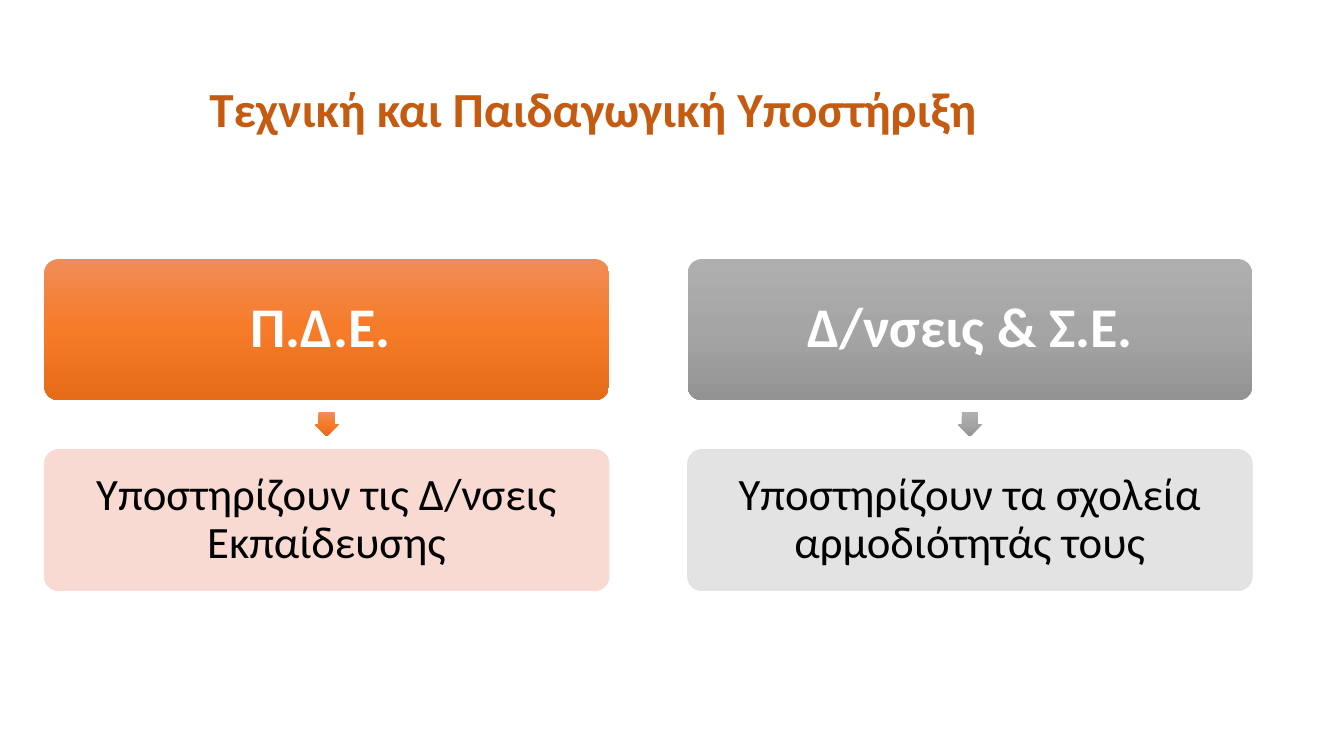
from copy import deepcopy

from lxml import etree
from pptx import Presentation
from pptx import util as u
from pptx.dml.color import RGBColor
from pptx.enum import shapes, text
from pptx.oxml.ns import qn

PX = 9144  # EMU in one px, at 100 px to the inch
FONT = "Calibri"
COLORS = {
    "title": "C55A11",
    "white": "FFFFFF",
    "black": "000000",
    "orange": ("F18C57", "F67B28", "E56C19"),
    "orange tint": "F8D7CE",
    "gray": ("AFAFAF", "A5A5A5", "939393"),
    "gray tint": "E1E1E1",
}
COLUMNS = [
    ("Π.Δ.Ε. ", "Υποστηρίζουν τις Δ/νσεις Εκπαίδευσης", "orange"),
    ("Δ/νσεις & Σ.Ε.", "Υποστηρίζουν τα σχολεία αρμοδιότητάς τους", "gray"),
]
COLUMN_LEFT, COLUMN_STEP = 44, 638
BOX_WIDTH, BOX_HEIGHT, ARROW_SIZE = 560, 140, 24
HEADER_TOP, ARROW_TOP, DETAIL_TOP = 257, 409, 446


def px(*lengths):
    return [u.Emu(length * PX) for length in lengths]


def write(shape, wording, size, color, bold=False):
    paragraph = shape.text_frame.paragraphs[0]
    paragraph.text = wording
    paragraph.alignment = text.PP_ALIGN.CENTER
    font = paragraph.runs[0].font
    font.name, font.size, font.bold = FONT, u.Pt(size), bold
    font.color.rgb = RGBColor.from_string(COLORS[color])
    return paragraph


def fill_gradient(shape, colors):
    """Fill from top to bottom with three evenly spaced colours."""
    shape.fill.gradient()
    shape.fill.gradient_angle = 270
    stop_list = shape._element.spPr.find(".//" + qn("a:gsLst"))
    stop_list.insert(1, deepcopy(stop_list[0]))
    for index, stop in enumerate(shape.fill.gradient_stops):
        stop.position = index / 2
        stop.color.rgb = RGBColor.from_string(colors[index])


def fill_tint(shape, color):
    """Give fill and thin outline one colour at 90% opacity."""
    shape.fill.solid()
    shape.line.width = u.Pt(0.5)
    for target in (shape.fill.fore_color, shape.line.color):
        target.rgb = RGBColor.from_string(color)
    for color_element in shape._element.spPr.iter(qn("a:srgbClr")):
        etree.SubElement(color_element, qn("a:alpha"), val="90000")


def add_plain_shape(slide, kind, adjustments, *bounds):
    shape = slide.shapes.add_shape(kind, *px(*bounds))
    shape.shadow.inherit = False
    shape.line.fill.background()
    for index, value in enumerate(adjustments):
        shape.adjustments[index] = value
    return shape


def add_box(slide, left, top, wording, size, color, inset, bold=False):
    box = add_plain_shape(slide, shapes.MSO_SHAPE.ROUNDED_RECTANGLE, [0.1],
                          left, top, BOX_WIDTH, BOX_HEIGHT)
    frame = box.text_frame
    frame.word_wrap = True
    frame.vertical_anchor = text.MSO_ANCHOR.MIDDLE
    frame.margin_left, frame.margin_top, frame.margin_right, frame.margin_bottom = px(*[inset] * 4)
    write(box, wording, size, color, bold).line_spacing = 0.9
    return box


def add_column(slide, left, header, detail, hue):
    header_box = add_box(slide, left, HEADER_TOP, header, 40, "white", 6, bold=True)
    fill_gradient(header_box, COLORS[hue])

    arrow_left = left + (BOX_WIDTH - ARROW_SIZE) // 2
    arrow = add_plain_shape(slide, shapes.MSO_SHAPE.DOWN_ARROW, [0.667, 0.5],
                            arrow_left, ARROW_TOP, ARROW_SIZE, ARROW_SIZE)
    fill_gradient(arrow, COLORS[hue])

    detail_box = add_box(slide, left, DETAIL_TOP, detail, 32, "black", 4)
    fill_tint(detail_box, COLORS[hue + " tint"])


def add_title(slide, wording):
    title = slide.shapes.add_textbox(*px(116, 73, 956, 69))
    title.text_frame.word_wrap = True
    title.text_frame.auto_size = text.MSO_AUTO_SIZE.SHAPE_TO_FIT_TEXT
    write(title, wording, 35, "title", bold=True)


def main():
    presentation = Presentation()
    presentation.slide_width, presentation.slide_height = px(1333, 750)
    slide = presentation.slides.add_slide(presentation.slide_layouts[6])
    for index, column in enumerate(COLUMNS):
        add_column(slide, COLUMN_LEFT + index * COLUMN_STEP, *column)
    add_title(slide, "Τεχνική και Παιδαγωγική Υποστήριξη ")
    presentation.save("out.pptx")


if __name__ == "__main__":
    main()
